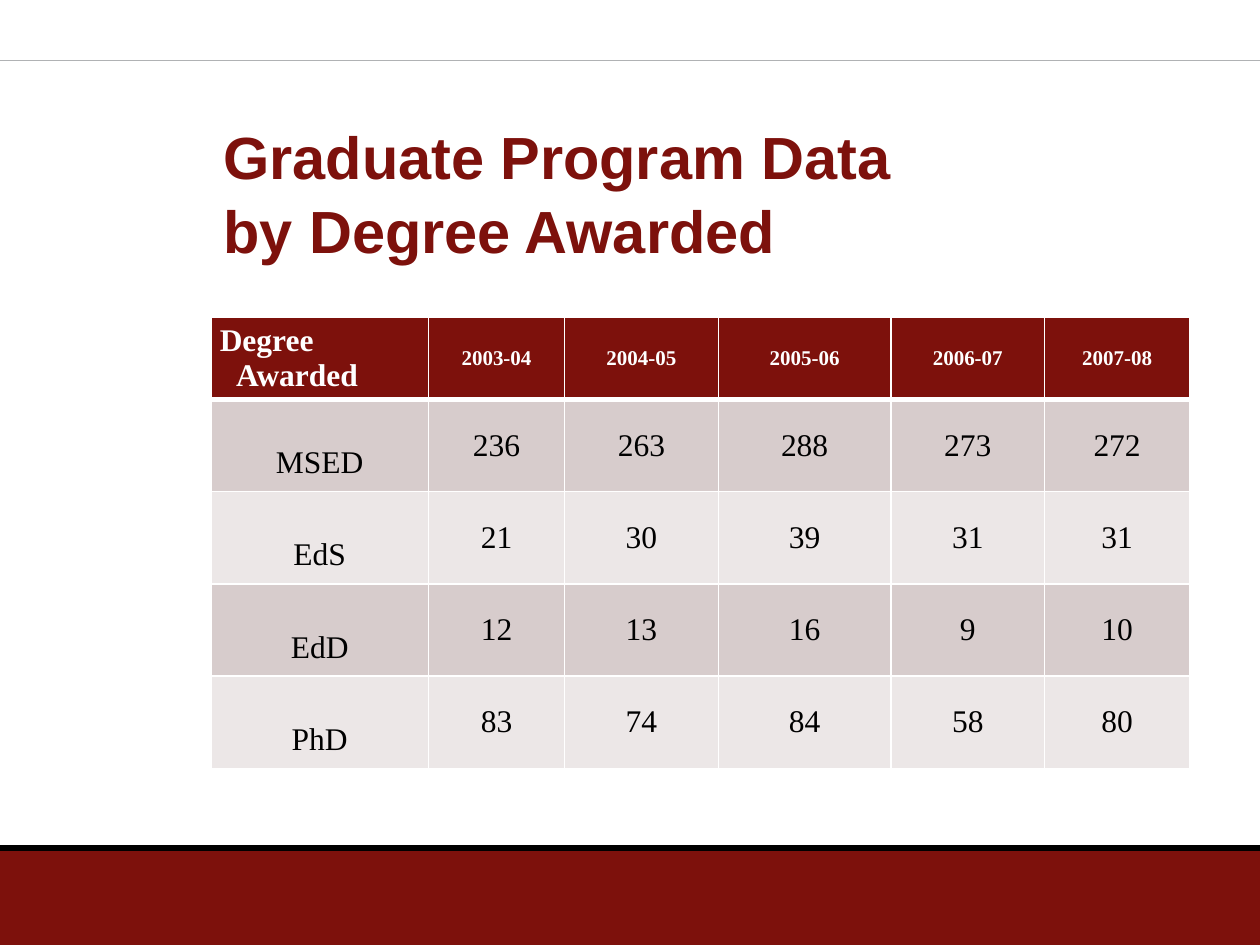
from pptx import Presentation
from pptx.dml.color import RGBColor
from pptx.enum.shapes import MSO_CONNECTOR, MSO_SHAPE
from pptx.enum.text import MSO_ANCHOR, MSO_AUTO_SIZE, PP_ALIGN
from pptx.oxml.ns import qn
from pptx.util import Cm, Pt
from lxml import etree

STRAIGHT = MSO_CONNECTOR.STRAIGHT
RECTANGLE = MSO_SHAPE.RECTANGLE
MIDDLE = MSO_ANCHOR.MIDDLE
NO_AUTOFIT = MSO_AUTO_SIZE.NONE
LEFT, CENTER = PP_ALIGN.LEFT, PP_ALIGN.CENTER

MAROON = RGBColor(0x7D, 0x11, 0x0C)
GRAY = RGBColor(0xB0, 0xB2, 0xB4)
BLACK = RGBColor(0, 0, 0)
WHITE = RGBColor(0xFF, 0xFF, 0xFF)
BANDS = (RGBColor(0xD7, 0xCC, 0xCC), RGBColor(0xEC, 0xE7, 0xE7))

HEADINGS = ("Degree Awarded", "2003-04", "2004-05", "2005-06", "2006-07", "2007-08")
AWARDS = (
    ("MSED", 236, 263, 288, 273, 272),
    ("EdS", 21, 30, 39, 31, 31),
    ("EdD", 12, 13, 16, 9, 10),
    ("PhD", 83, 74, 84, 58, 80),
)
COLUMN_WIDTHS = (4.39, 2.74, 3.1, 3.48, 3.1, 2.92)
HEADER_HEIGHT = 1.65


def add_rule(page, left, top, width, color, weight):
    rule = page.shapes.add_connector(STRAIGHT, Cm(left), Cm(top), Cm(left + width), Cm(top))
    rule.line.color.rgb = color
    rule.line.width = Pt(weight)
    etree.SubElement(rule.element.spPr, qn("a:effectLst"))


def add_footer(page, left, top, width, height):
    band = page.shapes.add_shape(RECTANGLE, Cm(left), Cm(top), Cm(width), Cm(height))
    band.shadow.inherit = False
    band.fill.solid()
    band.fill.fore_color.rgb = MAROON
    band.line.fill.background()
    add_rule(page, left, top - 0.05, width, BLACK, 3.75)


def place_title(page, left, top, width, height):
    title = page.shapes.title
    title.left, title.top, title.width, title.height = map(Cm, (left, top, width, height))
    frame = title.text_frame
    frame.text = "Graduate Program Data\vby Degree Awarded"
    frame.word_wrap = True
    frame.auto_size = NO_AUTOFIT
    frame.vertical_anchor = MIDDLE
    para = frame.paragraphs[0]
    para.alignment = LEFT
    para.line_spacing = 1.04
    for span in para.runs:
        style_font(span.font, "Arial", 34, MAROON, True)


def style_font(font, name, size, color, bold):
    font.name = name
    font.size = Pt(size)
    font.color.rgb = color
    font.bold = bold


def set_borders(cell, top_weight, bottom_weight):
    properties = cell._tc.get_or_add_tcPr()
    weights = {"a:lnL": 1, "a:lnR": 1, "a:lnT": top_weight, "a:lnB": bottom_weight}
    for tag, weight in weights.items():
        edge = etree.SubElement(properties, qn(tag), w=str(Pt(weight)))
        fill = etree.SubElement(edge, qn("a:solidFill"))
        etree.SubElement(fill, qn("a:srgbClr"), val=str(WHITE))


def fill_cell(cell, value, row, column):
    is_header, is_label = row == 0, column == 0
    set_borders(cell, 3 if row == 1 else 1, 3 if is_header else 1)
    cell.fill.solid()
    cell.fill.fore_color.rgb = MAROON if is_header else BANDS[(row - 1) % 2]
    cell.vertical_anchor = MIDDLE
    cell.margin_left = cell.margin_right = Cm(0.18)
    cell.margin_top = cell.margin_bottom = 0
    cell.text_frame.text = str(value)
    para = cell.text_frame.paragraphs[0]
    para.alignment = LEFT if is_header and is_label else CENTER
    if is_header and is_label:
        properties = para._p.get_or_add_pPr()
        properties.set("marL", str(Cm(0.33)))
        properties.set("indent", str(Cm(-0.33)))
    elif is_label:
        para.line_spacing = 2.0
        para.space_after = Pt(6)
    size = 12 if is_header and not is_label else 18
    style_font(para.runs[0].font, "Times New Roman", size, WHITE if is_header else BLACK, is_header)


def add_degree_table(page, left, top, width, height):
    rows = (HEADINGS, *AWARDS)
    frame = page.shapes.add_table(
        len(rows), len(HEADINGS), Cm(left), Cm(top), Cm(width), Cm(height))
    table = frame.table
    for column, column_width in zip(table.columns, COLUMN_WIDTHS):
        column.width = Cm(column_width)
    body_height = (height - HEADER_HEIGHT) / len(AWARDS)
    for row, values in enumerate(rows):
        table.rows[row].height = Cm(body_height if row else HEADER_HEIGHT)
        for column, value in enumerate(values):
            fill_cell(table.cell(row, column), value, row, column)


def main():
    deck = Presentation()
    deck.slide_width, deck.slide_height = Cm(25.4), Cm(19.05)
    page = deck.slides.add_slide(deck.slide_layouts[5])
    add_footer(page, 0, 17.15, 25.4, 1.9)
    add_rule(page, 0, 1.22, 25.4, GRAY, 0.75)
    place_title(page, 4.25, 2.26, 19.75, 3.18)
    add_degree_table(page, 4.25, 6.4, sum(COLUMN_WIDTHS), 9.09)
    deck.save("out.pptx")


if __name__ == "__main__":
    main()
